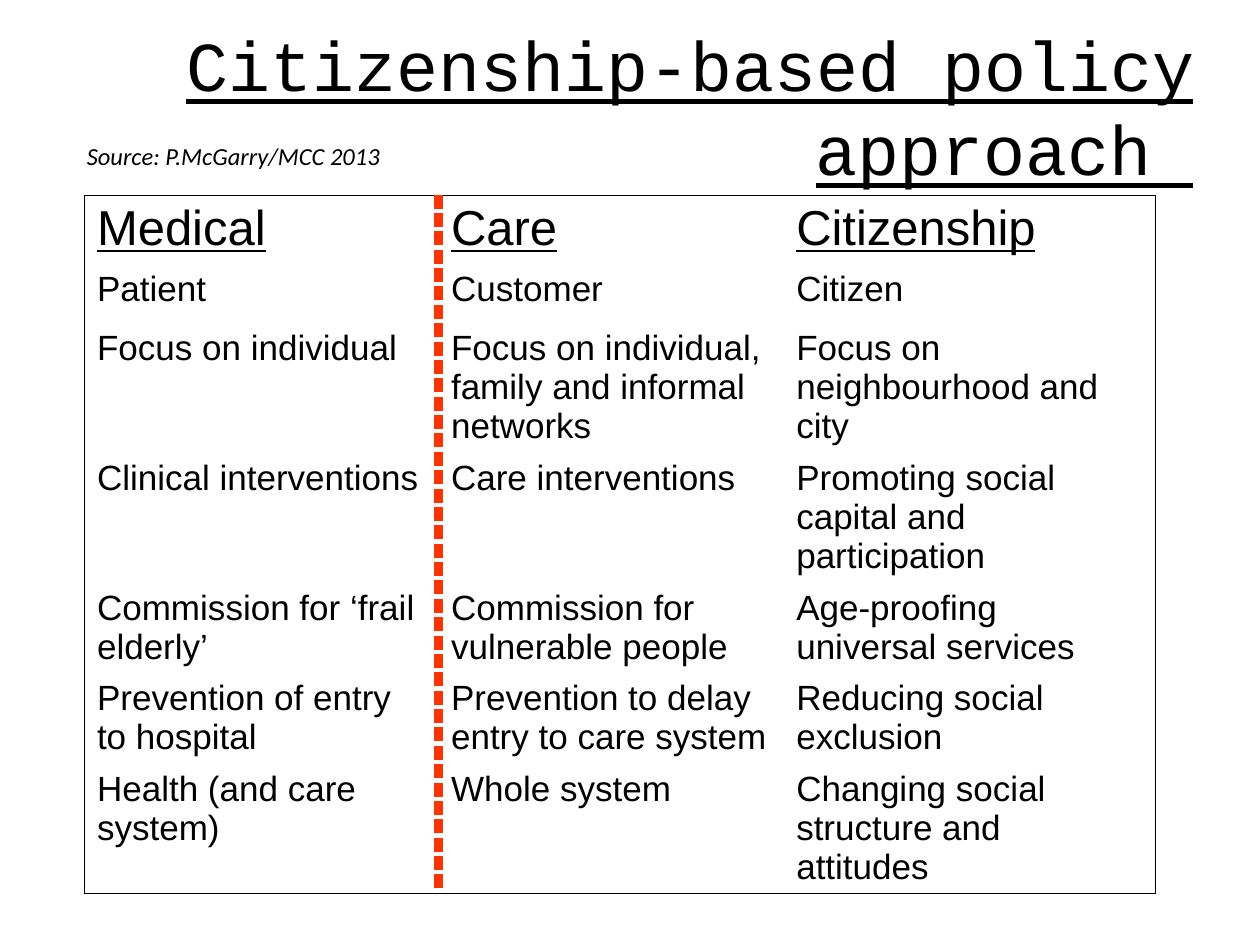
from pptx import Presentation
from pptx.dml.color import RGBColor
from pptx.enum.text import MSO_ANCHOR, PP_ALIGN
from pptx.oxml import parse_xml
from pptx.oxml.ns import nsdecls
from pptx.util import Inches, Pt

BLACK = "000000"
RED = "FF3300"
ROWS = [
    ("Medical", "Care", "Citizenship"),
    ("Patient", "Customer", "Citizen"),
    ("Focus on individual", "Focus on individual, family and informal networks",
     "Focus on neighbourhood and city"),
    ("Clinical interventions", "Care interventions",
     "Promoting social capital and participation"),
    ("Commission for ‘frail elderly’", "Commission for vulnerable people",
     "Age-proofing universal services"),
    ("Prevention of entry to hospital", "Prevention to delay entry to care system",
     "Reducing social exclusion"),
    ("Health (and care system)", "Whole system",
     "Changing social structure and attitudes"),
]
WIDTHS = (2.81, 2.74, 2.95)
HEIGHTS = (0.54, 0.47, 0.94, 0.66, 0.65, 0.65, 0.55)


def paint(color, code):
    color.rgb = RGBColor.from_string(code)


class Deck:
    def __init__(self):
        self.file = Presentation()
        self.file.slide_width = Inches(10)
        self.file.slide_height = Inches(7.5)
        self.slide = self.file.slides.add_slide(self.file.slide_layouts[6])

    def add_words(self, para, words, face, size, line=False, slant=False):
        run = para.add_run()
        run.text = words
        font = run.font
        font.name = face
        font.size = Pt(size)
        font.underline = line
        font.italic = slant
        paint(font.color, BLACK)

    def add_text(self, spot, words, face, size, align=PP_ALIGN.LEFT,
                 anchor=MSO_ANCHOR.TOP, **look):
        box = self.slide.shapes.add_textbox(*map(Inches, spot))
        frame = box.text_frame
        frame.word_wrap = True
        frame.vertical_anchor = anchor
        para = frame.paragraphs[0]
        para.alignment = align
        self.add_words(para, words, face, size, **look)
        return para

    def edge(self, side, code=None, width=1, dash="solid"):
        if code:
            fill = f'<a:solidFill><a:srgbClr val="{code}"/></a:solidFill>'
        else:
            fill = "<a:noFill/>"
        return parse_xml(
            f'<a:ln{side} {nsdecls("a")} w="{Pt(width)}">{fill}'
            f'<a:prstDash val="{dash}"/></a:ln{side}>')

    def add_grid(self, spot, rows, widths, heights):
        frame = self.slide.shapes.add_table(len(rows), len(widths), *map(Inches, spot))
        grid = frame.table
        grid.first_row = grid.horz_banding = False
        for col, width in zip(grid.columns, widths):
            col.width = Inches(width)
        last = len(rows) - 1
        end = len(widths) - 1
        rim, split = (BLACK, 1), (RED, 6, "dash")
        for i, row in enumerate(rows):
            grid.rows[i].height = Inches(heights[i])
            for j, words in enumerate(row):
                cell = grid.cell(i, j)
                sides = {
                    "L": {0: rim, 1: split}.get(j, ()),
                    "R": {0: split, end: rim}.get(j, ()),
                    "T": rim if i == 0 else (),
                    "B": rim if i == last else (),
                }
                props = cell._tc.get_or_add_tcPr()
                for side, style in sides.items():
                    props.append(self.edge(side, *style))
                cell.fill.background()
                self.add_words(cell.text_frame.paragraphs[0], words, "Arial",
                               20 if i else 28, line=i == 0)


def main():
    deck = Deck()
    deck.add_grid((0.67, 1.55, 8.5, 4.46), ROWS, WIDTHS, HEIGHTS)
    title = deck.add_text((0.59, 0.21, 8.98, 1.25), "Citizenship-based policy approach ",
                          "Courier New", 40, PP_ALIGN.RIGHT, MSO_ANCHOR.MIDDLE, line=True)
    title.line_spacing = Pt(48)
    deck.add_text((0.59, 1.07, 3.62, 0.33), "Source: P.McGarry/MCC 2013",
                  "Calibri", 14, slant=True)
    deck.file.save("out.pptx")


if __name__ == "__main__":
    main()
